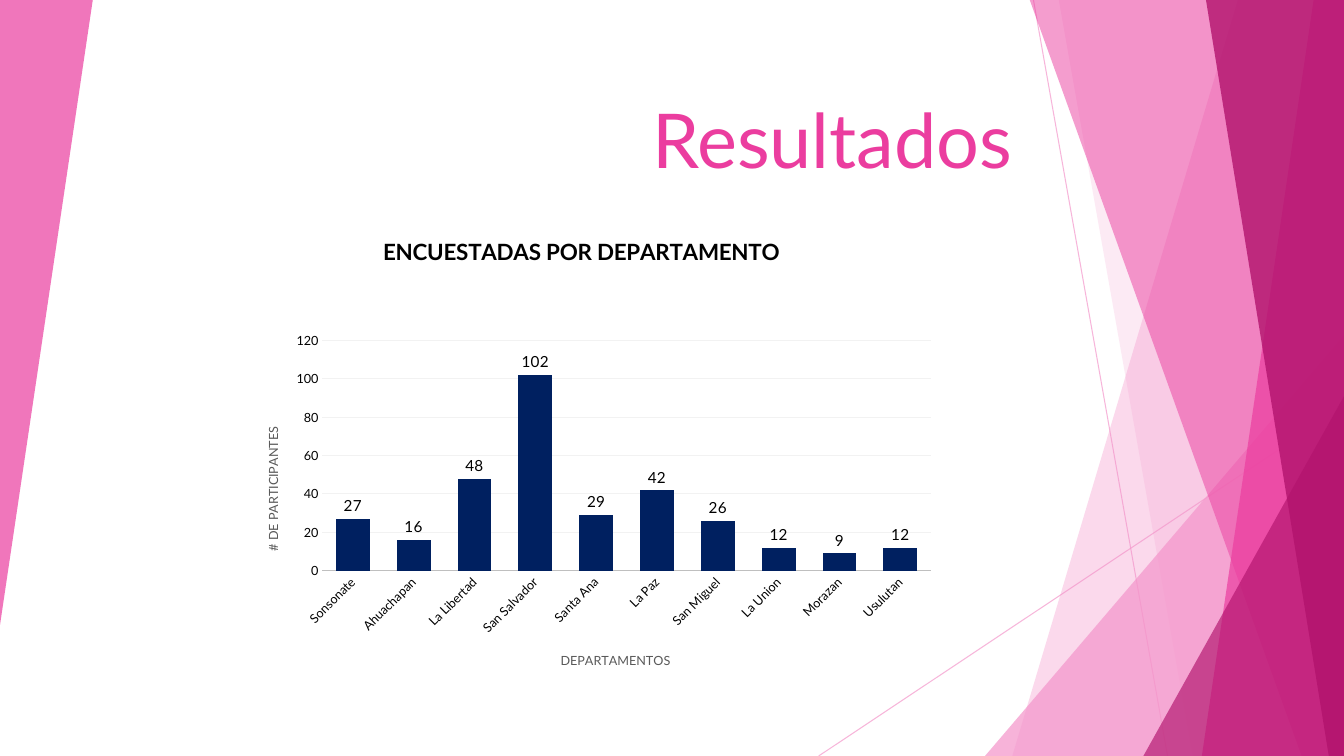
"""Build the results slide with its chart of participants by department."""
import pptx
import pptx.chart.data
import pptx.dml.color
import pptx.enum.chart
import pptx.enum.shapes
import pptx.enum.text
import pptx.oxml
import pptx.oxml.ns
import pptx.util

Inches, Pt = pptx.util.Inches, pptx.util.Pt
FONT = "Lato"
HEAD = "Resultados"
TITLE = "ENCUESTADAS POR DEPARTAMENTO"
CAT = "DEPARTAMENTOS"
VAL = "# DE PARTICIPANTES"
DATA = {
    "Sonsonate": 27, "Ahuachapan": 16, "La Libertad": 48, "San Salvador": 102,
    "Santa Ana": 29, "La Paz": 42, "San Miguel": 26, "La Union": 12,
    "Morazan": 9, "Usulutan": 12,
}
COLORS = {
    "light": "F496CB", "pink": "EB3D9F", "dark": "B2136D", "navy": "002060",
    "black": "000000", "gray": "595959", "axis": "BFBFBF", "grid": "F2F2F2",
}
WIDE, HIGH, TOP = 13.33, 7.5, -0.01
LINES = [(10.25, 0, 11.58, HIGH), (WIDE, 4.03, 8.12, HIGH)]
SHARDS = [
    ("band", 12.28, 10.04, "light", 36),
    ("band", 10.5, 11.83, "light", 20),
    ("peak", 9.77, 3.33, "light", 72),
    ("band", 10.21, 12.91, "pink", 50),
    ("band", 13.03, 11.92, "pink", 70),
    ("band", 11.96, 13.18, "dark", 80),
    ("peak", 11.34, 3.93, "dark", 66),
]
PLOT = (0.118, 0.277, 0.882, 0.502)


def color(name):
    return pptx.dml.color.RGBColor.from_string(COLORS[name])


def fade(item, alpha):
    node = item.find(".//" + pptx.oxml.ns.qn("a:srgbClr"))
    pptx.oxml.ns.qn("a:alpha")
    node.append(pptx.oxml.parse_xml(
        f'<a:alpha {pptx.oxml.ns.nsdecls("a")} val="{alpha * 1000}"/>'))


def paint(shape, name, alpha):
    shape.shadow.inherit = False
    shape.fill.solid()
    shape.fill.fore_color.rgb = color(name)
    shape.line.fill.background()
    fade(shape._element.spPr, alpha)


def peak(shapes, box, name, alpha, turn=0):
    kind = pptx.enum.shapes.MSO_SHAPE.ISOSCELES_TRIANGLE
    shape = shapes.add_shape(kind, *map(Inches, box))
    shape.adjustments[0] = 1
    shape.rotation = turn
    paint(shape, name, alpha)


def band(shapes, high, low, name, alpha):
    dots = [(WIDE, TOP), (WIDE, HIGH), (low, HIGH)]
    form = shapes.build_freeform(Inches(high), Inches(TOP))
    form.add_line_segments([(Inches(x), Inches(y)) for x, y in dots], close=True)
    paint(form.convert_to_shape(), name, alpha)


def style(font, size, name, bold=False):
    font.name, font.size, font.bold = FONT, Pt(size), bold
    font.color.rgb = color(name)


def place(owner, spot, inner=False):
    for old in owner.findall(pptx.oxml.ns.qn("c:layout")):
        owner.remove(old)
    tags = list(zip("xywh", spot))
    modes = "".join(f'<c:{t}Mode val="edge"/>' for t, _ in tags[:2])
    sizes = "".join(f'<c:{t} val="{v}"/>' for t, v in tags)
    target = '<c:layoutTarget val="inner"/>' if inner else ""
    node = pptx.oxml.parse_xml(
        f'<c:layout {pptx.oxml.ns.nsdecls("c")}><c:manualLayout>'
        f'{target}{modes}{sizes}</c:manualLayout></c:layout>')
    owner.insert(0 if inner else 1, node)


def label(owner, text, size, name, spot, bold=False):
    owner.has_title = True
    title = getattr(owner, "chart_title", None) or owner.axis_title
    run = title.text_frame.paragraphs[0].add_run()
    run.text = text
    style(run.font, size, name, bold)
    place(title._element, spot)


def draw(shapes):
    for x, y, right, low in LINES:
        line = shapes.add_connector(
            pptx.enum.shapes.MSO_CONNECTOR.STRAIGHT,
            *map(Inches, (x, y, right, low)))
        line.line.color.rgb = color("light")
        line.line.width = Pt(0.75)
        props = line._element.spPr
        fade(props, 70)
        props.append(pptx.oxml.parse_xml(
            f'<a:effectLst {pptx.oxml.ns.nsdecls("a")}/>'))
    for kind, a, b, name, alpha in SHARDS:
        if kind == "band":
            band(shapes, a, b, name, alpha)
        else:
            peak(shapes, (a, b, WIDE - a, HIGH - b), name, alpha)
    peak(shapes, (0, 0, 0.92, 6.2), "pink", 70, 180)


def head(shapes):
    box = shapes.add_textbox(*map(Inches, (1.65, 0.07, 8.49, 1.8)))
    frame = box.text_frame
    frame.word_wrap = True
    frame.vertical_anchor = pptx.enum.text.MSO_ANCHOR.BOTTOM
    para = frame.paragraphs[0]
    para.alignment = pptx.enum.text.PP_ALIGN.RIGHT
    run = para.add_run()
    run.text = HEAD
    style(run.font, 54, "pink")


def graph(shapes):
    enum = pptx.enum.chart
    data = pptx.chart.data.CategoryChartData()
    data.categories = list(DATA)
    data.add_series("Series 1", list(DATA.values()))
    chart = shapes.add_chart(
        enum.XL_CHART_TYPE.COLUMN_CLUSTERED,
        *map(Inches, (2.39, 2.12, 6.85, 4.55)), data).chart
    chart.has_legend = False
    style(chart.font, 10, "black")
    label(chart, TITLE, 16, "black", (0.2, 0.04), True)
    cat, val = chart.category_axis, chart.value_axis
    label(cat, CAT, 9, "gray", (0.46, 0.95))
    label(val, VAL, 9, "gray", (0.03, 0.46))
    for axis in (cat, val):
        axis.major_tick_mark = axis.minor_tick_mark = enum.XL_TICK_MARK.NONE
        style(axis.tick_labels.font, 9, "black")
    turn = cat._element.find(
        pptx.oxml.ns.qn("c:txPr") + "/" + pptx.oxml.ns.qn("a:bodyPr"))
    turn.set("rot", "-2700000")
    turn.set("vert", "horz")
    cat.format.line.color.rgb = color("axis")
    cat.format.line.width = Pt(1.25)
    val.format.line.fill.background()
    val.minimum_scale, val.maximum_scale, val.major_unit = 0, 120, 20
    grid = val.major_gridlines.format.line
    grid.color.rgb = color("grid")
    grid.width = Pt(0.75)
    plot = chart.plots[0]
    plot.gap_width, plot.overlap = 80, 25
    plot.vary_by_categories = False
    bars = plot.series[0]
    bars.format.fill.solid()
    bars.format.fill.fore_color.rgb = color("navy")
    tags = bars.data_labels
    tags.show_value = True
    tags.position = enum.XL_LABEL_POSITION.OUTSIDE_END
    style(tags.font, 10.9, "black")
    place(chart._chartSpace.chart.plotArea, PLOT, True)


def main():
    deck = pptx.Presentation()
    deck.slide_width, deck.slide_height = Inches(WIDE), Inches(HIGH)
    shapes = deck.slides.add_slide(deck.slide_layouts[6]).shapes
    draw(shapes)
    head(shapes)
    graph(shapes)
    deck.save("out.pptx")


if __name__ == "__main__":
    main()
